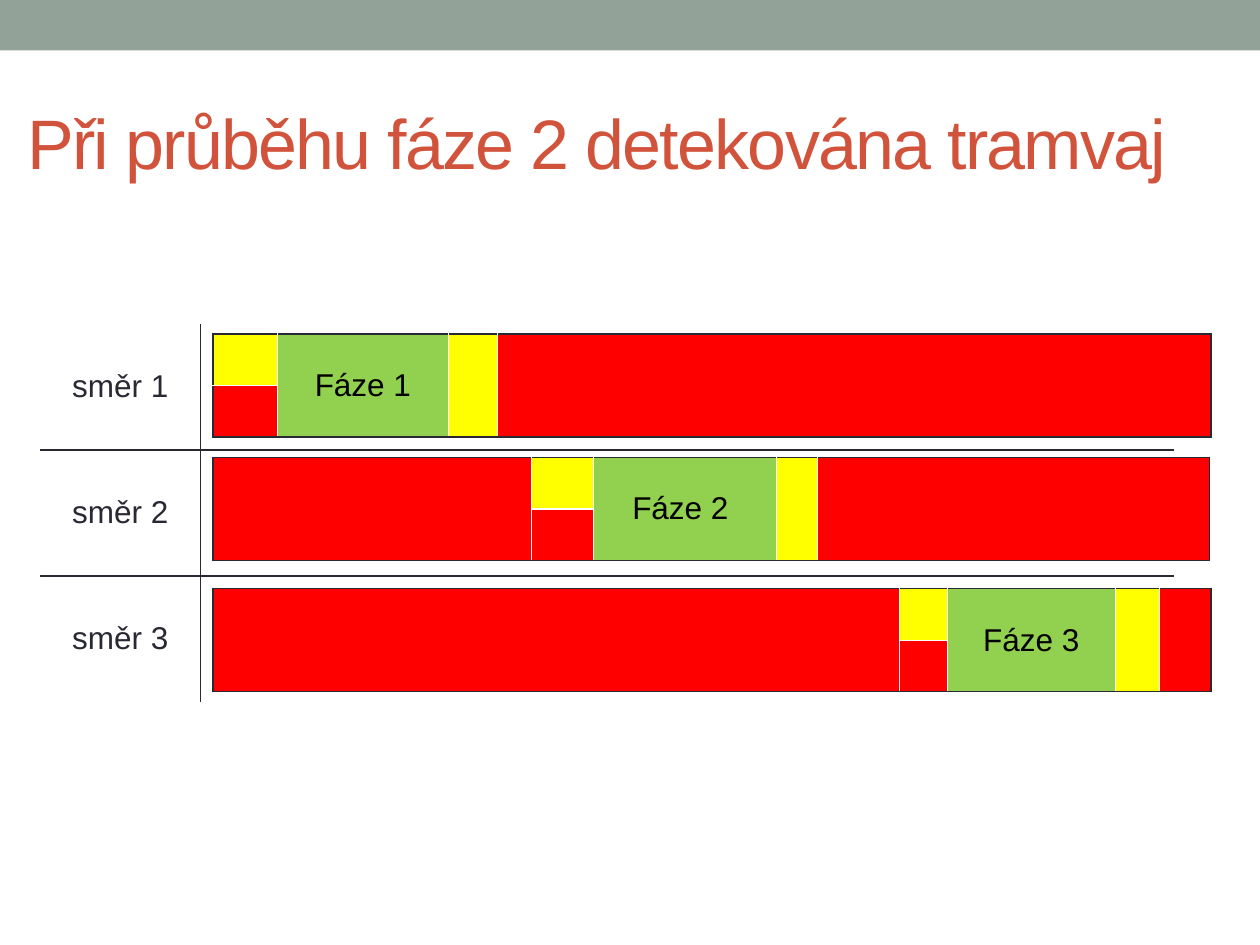
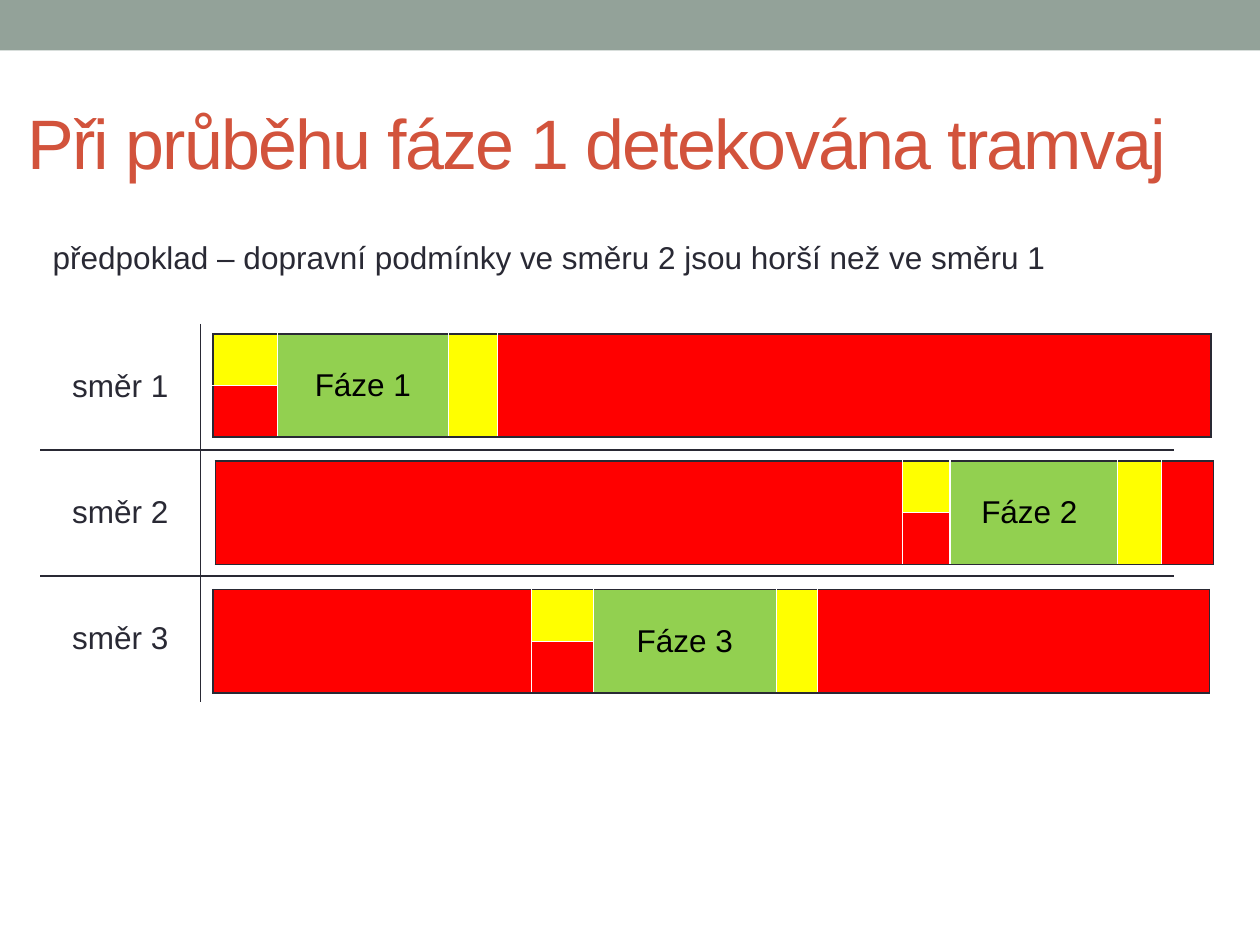
from lxml import etree
from pptx import Presentation
from pptx.dml.color import RGBColor
from pptx.enum.shapes import MSO_SHAPE
from pptx.enum.text import MSO_ANCHOR, PP_ALIGN
from pptx.oxml.ns import qn
from pptx.util import Inches, Pt

RECT = MSO_SHAPE.RECTANGLE
MIDDLE = MSO_ANCHOR.MIDDLE
CENTER = PP_ALIGN.CENTER

BAND = RGBColor(0x93, 0xA2, 0x99)
TITLE = RGBColor(0xD2, 0x53, 0x3C)
INK = RGBColor(0x29, 0x29, 0x34)
BLACK = RGBColor(0, 0, 0)
WHITE = RGBColor(0xFF, 0xFF, 0xFF)
RED = RGBColor(0xFF, 0, 0)
YELLOW = RGBColor(0xFF, 0xFF, 0)
GREEN = RGBColor(0x92, 0xD0, 0x50)

FONT = "Arial"
NO_STYLE = "{2D5ABB26-0587-4C30-8999-92F81FD0307C}"
DARK_LINE, WHITE_LINE = (INK, 1), (WHITE, 0.75)

# Signal bars: a split red/yellow column, green, yellow and red,
# with a leading red column where the phase starts later
SIGNALS = [RED, None, GREEN, YELLOW, RED]
EARLY = [0.51, 1.36, 0.39, 5.66]
MIDWAY = [2.53, 0.49, 1.45, 0.33, 3.11]
LATE = [5.45, 0.38, 1.33, 0.35, 0.41]
BAR_ROW = 0.41

SLIDES = [
    ("Při průběhu fáze 2 detekována tramvaj", None,
     [("Fáze 1", 1.69, 2.65, EARLY),
      ("Fáze 2 ", 1.69, 3.63, MIDWAY),
      ("Fáze 3", 1.69, 4.67, LATE)]),
    ("Při průběhu fáze 1 detekována tramvaj",
     "předpoklad – dopravní podmínky ve směru 2 jsou horší než ve směru 1",
     [("Fáze 1", 1.69, 2.65, EARLY),
      ("Fáze 3", 1.69, 4.68, MIDWAY),
      ("Fáze 2 ", 1.71, 3.66, LATE)]),
]


def add_grid(slide, left, top, widths, heights):
    """Add an unstyled table with the given column widths and row heights."""
    frame = slide.shapes.add_table(
        len(heights), len(widths), Inches(left), Inches(top),
        Inches(sum(widths)), Inches(sum(heights)))
    table = frame.table
    table.first_row = table.horz_banding = False
    table._tbl.tblPr.find(qn("a:tableStyleId")).text = NO_STYLE
    for column, width in zip(table.columns, widths):
        column.width = Inches(width)
    for row, height in zip(table.rows, heights):
        row.height = Inches(height)
    return table


def style_cell(cell, fill, color, borders, text=""):
    """Set fill, centred text and borders, given as {side: (colour, points)}."""
    if fill is None:
        cell.fill.background()
    else:
        cell.fill.solid()
        cell.fill.fore_color.rgb = fill
    cell.vertical_anchor = MIDDLE
    p = cell.text_frame.paragraphs[0]
    p.text = text
    p.alignment = CENTER
    p.font.name, p.font.size, p.font.color.rgb = FONT, Pt(18), color
    sides = [side for side in "LRTB" if side in borders]
    for i, side in enumerate(sides):
        line_color, width = borders[side]
        ln = etree.Element(qn("a:ln" + side), w=str(Pt(width)))
        solid = etree.SubElement(ln, qn("a:solidFill"))
        etree.SubElement(solid, qn("a:srgbClr"), val=str(line_color))
        cell._tc.get_or_add_tcPr().insert(i, ln)


prs = Presentation()
prs.slide_width, prs.slide_height = Inches(10), Inches(7.5)

for title, note, bars in SLIDES:
    slide = prs.slides.add_slide(prs.slide_layouts[6])

    # Top band
    sp = slide.shapes.add_shape(RECT, 0, 0, prs.slide_width, Inches(0.4))
    sp.shadow.inherit = False
    sp.fill.solid()
    sp.fill.fore_color.rgb = BAND
    sp.line.fill.background()

    # Title and optional note
    texts = [(title, (0.12, 0.58, 9.78, 1.08), 40, TITLE)]
    if note:
        texts.append((note, (0.32, 1.84, 8.19, 0.4), 18, INK))
    for text, box, size, color in texts:
        tf = slide.shapes.add_textbox(*map(Inches, box)).text_frame
        tf.word_wrap = True
        tf.vertical_anchor = MIDDLE
        p = tf.paragraphs[0]
        r = p.add_run()
        r.text = text
        p.font.name, p.font.size, p.font.color.rgb = FONT, Pt(size), color
        if text == title:
            r.font._element.set("spc", "-100")

    # Grid of directions
    table = add_grid(slide, 0.32, 2.57, [1.27, 7.73], [1, 1, 1])
    for row in range(3):
        for col in range(2):
            borders = {"LR"[1 - col]: DARK_LINE}
            if row > 0:
                borders["T"] = DARK_LINE
            if row < 2:
                borders["B"] = DARK_LINE
            text = f"směr {row + 1}" if col == 0 else ""
            style_cell(table.cell(row, col), None, INK, borders, text)

    # Signal bar of each direction
    for phase, left, top, widths in bars:
        table = add_grid(slide, left, top, widths, [BAR_ROW] * 2)
        last = len(widths) - 1
        for col, fill in enumerate(SIGNALS[-len(widths):]):
            upper, lower = table.cell(0, col), table.cell(1, col)
            sides = {"L": WHITE_LINE if col else DARK_LINE,
                     "R": WHITE_LINE if col < last else DARK_LINE}
            above, below = {**sides, "T": DARK_LINE}, {**sides, "B": DARK_LINE}
            if fill is None:
                style_cell(upper, YELLOW, BLACK, {**above, "B": WHITE_LINE})
                style_cell(lower, RED, BLACK, {**below, "T": WHITE_LINE})
            else:
                upper.merge(lower)
                text = phase if fill == GREEN else ""
                style_cell(upper, fill, BLACK, {**above, "B": DARK_LINE}, text)
                style_cell(lower, fill, BLACK, below)

prs.save("out.pptx")
